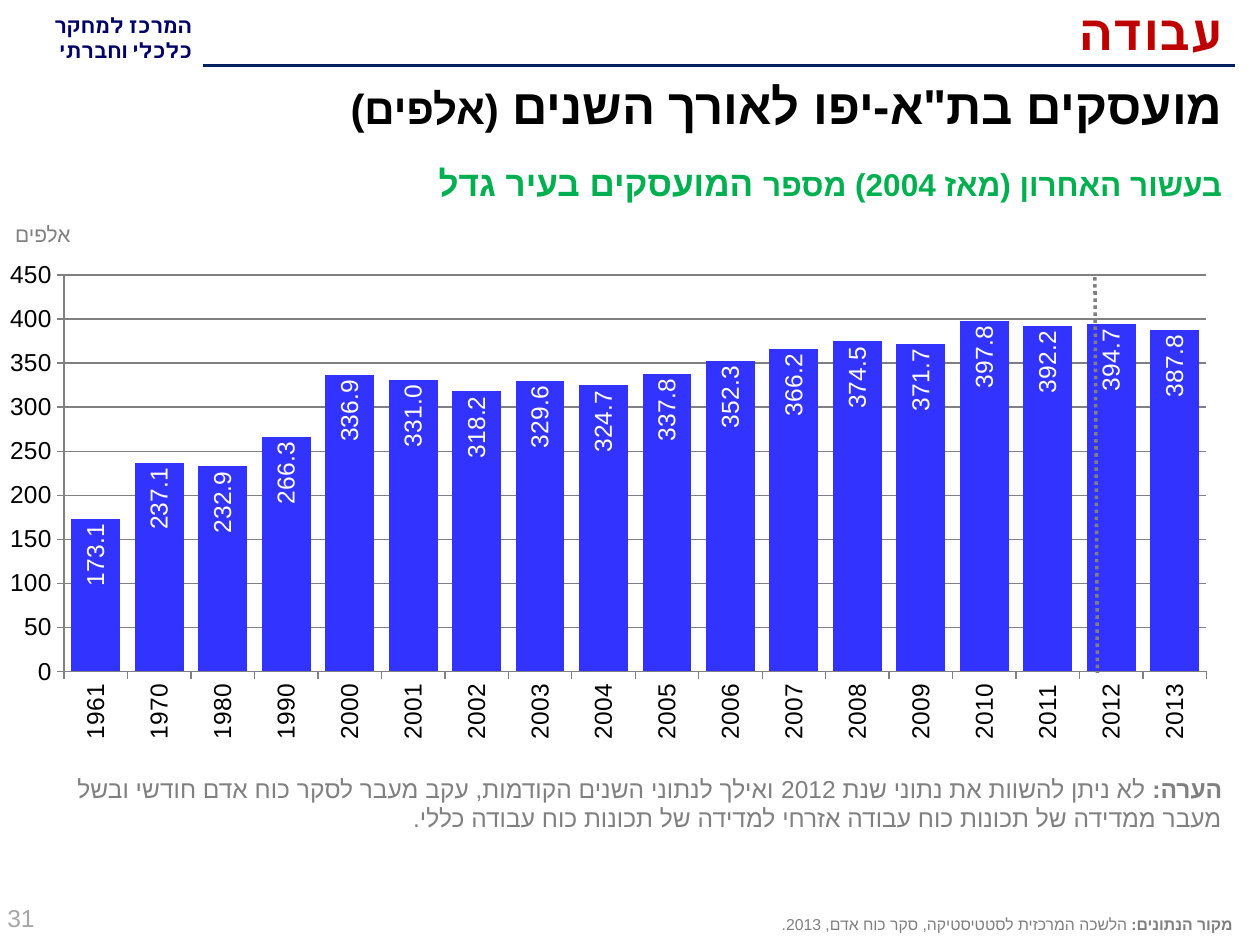
from lxml import etree
from pptx import Presentation
from pptx.chart.data import CategoryChartData
from pptx.dml.color import RGBColor
from pptx.enum.chart import XL_CHART_TYPE as ChartType, XL_LABEL_POSITION as LabelPosition
from pptx.enum.chart import XL_TICK_MARK as TickMark
from pptx.enum.dml import MSO_LINE as LineDash
from pptx.enum.shapes import MSO_CONNECTOR as Connector
from pptx.enum.text import MSO_ANCHOR as Anchor, PP_ALIGN as Align
from pptx.oxml import parse_xml
from pptx.oxml.ns import nsdecls, qn
from pptx.util import Inches, Pt

BLACK = RGBColor(0x00, 0x00, 0x00)
WHITE = RGBColor(0xFF, 0xFF, 0xFF)
GRAY = RGBColor(0x80, 0x80, 0x80)
LIGHT_GRAY = RGBColor(0xA6, 0xA6, 0xA6)
NAVY = RGBColor(0x00, 0x00, 0x66)
RULE_NAVY = RGBColor(0x00, 0x20, 0x60)
RED = RGBColor(0xBF, 0x00, 0x00)
GREEN = RGBColor(0x00, 0xB0, 0x50)
BAR_BLUE = RGBColor(0x33, 0x33, 0xFF)

YEARS = ["1961", "1970", "1980", "1990"] + [str(year) for year in range(2000, 2014)]
EMPLOYED = [173.1, 237.1, 232.9, 266.3, 336.9, 331.0, 318.2, 329.6, 324.7,
            337.8, 352.3, 366.2, 374.5, 371.7, 397.8, 392.2, 394.7, 387.8]


def add_text(slide, box, paragraphs, color, font_name="Arial", align=Align.RIGHT,
             anchor=Anchor.TOP):
    """Place right-to-left text; each paragraph is a list of (text, size, bold) runs."""
    frame = slide.shapes.add_textbox(*map(Inches, box)).text_frame
    frame.word_wrap = True
    frame.vertical_anchor = anchor
    for index, runs in enumerate(paragraphs):
        paragraph = frame.add_paragraph() if index else frame.paragraphs[0]
        paragraph.alignment = align
        paragraph._p.get_or_add_pPr().set("rtl", "1")
        for text, size, bold in runs:
            run = paragraph.add_run()
            run.text = text
            font = run.font
            font.size, font.bold, font.name = Pt(size), bold, font_name
            font.color.rgb = color
            complex_script = etree.SubElement(run._r.get_or_add_rPr(), qn("a:cs"))
            complex_script.set("typeface", font_name)


def add_line(slide, ends, color, width, dash=None):
    line = slide.shapes.add_connector(Connector.STRAIGHT, *map(Inches, ends))
    line.line.color.rgb = color
    line.line.width = Pt(width)
    if dash:
        line.line.dash_style = dash
    etree.SubElement(line._element.spPr, qn("a:effectLst"))


def add_header(slide, left, top, width):
    add_text(slide, (left, top + 0.08, 1.81, 0.51),
             [[(" המרכז למחקר ", 12, True)], [(" כלכלי וחברתי ", 12, True)]],
             NAVY, "Calibri")
    right = left + width
    add_line(slide, (right, top + 0.55, 1.61, top + 0.55), RULE_NAVY, 2.25)
    add_text(slide, (right - 8.22, top, 8.22, 0.55), [[("עבודה", 28, True)]],
             RED, "Calibri", anchor=Anchor.MIDDLE)


def add_headings(slide, left, top, width):
    add_text(slide, (left, top, width, 0.6),
             [[('מועסקים בת"א-יפו לאורך השנים ', 28, True), ("(אלפים)", 24, True)]], BLACK)
    add_text(slide, (left, top + 0.68, width, 0.79),
             [[("בעשור האחרון (מאז 2004) מספר", 18, True),
               (" המועסקים בעיר גדל", 20, True)]], GREEN, align=Align.JUSTIFY)


def turn_labels_upright(text_properties):
    body = text_properties.find(qn("a:bodyPr"))
    body.set("rot", "-5400000")
    body.set("vert", "horz")


def set_inner_plot(chart, x, y, w, h):
    """Fix the plot area inside the axes, as fractions of the chart."""
    plot_area = chart._chartSpace.find(".//" + qn("c:plotArea"))
    for old_layout in plot_area.findall(qn("c:layout")):
        plot_area.remove(old_layout)
    plot_area.insert(0, parse_xml(
        f'<c:layout {nsdecls("c")}><c:manualLayout><c:layoutTarget val="inner"/>'
        '<c:xMode val="edge"/><c:yMode val="edge"/>'
        f'<c:x val="{x}"/><c:y val="{y}"/><c:w val="{w}"/><c:h val="{h}"/>'
        '</c:manualLayout></c:layout>'))


def style_axis(axis):
    axis.major_tick_mark = TickMark.OUTSIDE
    axis.minor_tick_mark = TickMark.NONE
    axis.format.line.color.rgb = GRAY
    font = axis.tick_labels.font
    font.size, font.name = Pt(14), "Arial"
    font.color.rgb = BLACK


def add_employment_chart(slide, left, top, width, height):
    data = CategoryChartData(number_format="General")
    data.categories = YEARS
    data.add_series("Series 1", EMPLOYED)
    chart = slide.shapes.add_chart(ChartType.COLUMN_CLUSTERED, Inches(left), Inches(top),
                                   Inches(width), Inches(height), data).chart
    chart.has_title = False
    chart.has_legend = False
    chart.font.size, chart.font.name = Pt(18), "Arial"
    chart.font.color.rgb = BLACK
    set_inner_plot(chart, 0.043, 0.034, 0.941, 0.701)

    years, values = chart.category_axis, chart.value_axis
    style_axis(years)
    style_axis(values)
    turn_labels_upright(years._element.find(qn("c:txPr")))
    values.minimum_scale, values.maximum_scale, values.major_unit = 0, 450, 50
    values.has_major_gridlines = True
    values.major_gridlines.format.line.color.rgb = GRAY

    plot = chart.plots[0]
    plot.gap_width = 30
    plot.vary_by_categories = False
    bars = plot.series[0]
    bars.format.fill.solid()
    bars.format.fill.fore_color.rgb = BAR_BLUE
    labels = bars.data_labels
    labels.show_value = True
    labels.position = LabelPosition.INSIDE_END
    labels.number_format = "#,##0.0"
    labels.number_format_is_linked = False
    labels.font.size, labels.font.name = Pt(14), "Arial"
    labels.font.color.rgb = WHITE
    turn_labels_upright(labels._element.find(qn("c:txPr")))

    add_text(slide, (-0.43, top - 0.32, 1.54, 0.3), [[("אלפים", 12, False)]], GRAY,
             align=Align.CENTER)
    add_line(slide, (8.69, top + 0.17, 8.71, top + 3.31), GRAY, 2, LineDash.ROUND_DOT)


def add_note(slide, left, top, width, height):
    note = ("לא ניתן להשוות את נתוני שנת 2012 ואילך לנתוני השנים הקודמות, "
            "עקב מעבר לסקר כוח אדם חודשי ובשל מעבר ממדידה של תכונות כוח עבודה "
            "אזרחי למדידה של תכונות כוח עבודה כללי. ")
    add_text(slide, (left, top, width, height),
             [[("הערה: ", 14, True), (note, 14, False)]], GRAY)


def add_footer(slide, left, top):
    add_text(slide, (left, top, 2.33, 0.44), [[("31", 14, False)]], LIGHT_GRAY,
             align=Align.LEFT, anchor=Anchor.MIDDLE)
    add_text(slide, (2.95, top + 0.15, 6.93, 0.25),
             [[("מקור הנתונים: ", 9, True),
               ("הלשכה המרכזית לסטטיסטיקה, סקר כוח אדם, 2013.", 9, False)]], GRAY)


def main():
    deck = Presentation()
    deck.slide_width, deck.slide_height = Inches(10), Inches(7.5)
    slide = deck.slides.add_slide(deck.slide_layouts[6])
    add_header(slide, -0.15, -0.03, 9.95)
    add_headings(slide, 0.09, 0.55, 9.71)
    add_employment_chart(slide, 0.08, 2.03, 9.65, 4.49)
    add_note(slide, 0.43, 6.09, 9.37, 0.57)
    add_footer(slide, -0.04, 7.06)
    deck.save("out.pptx")


if __name__ == "__main__":
    main()
